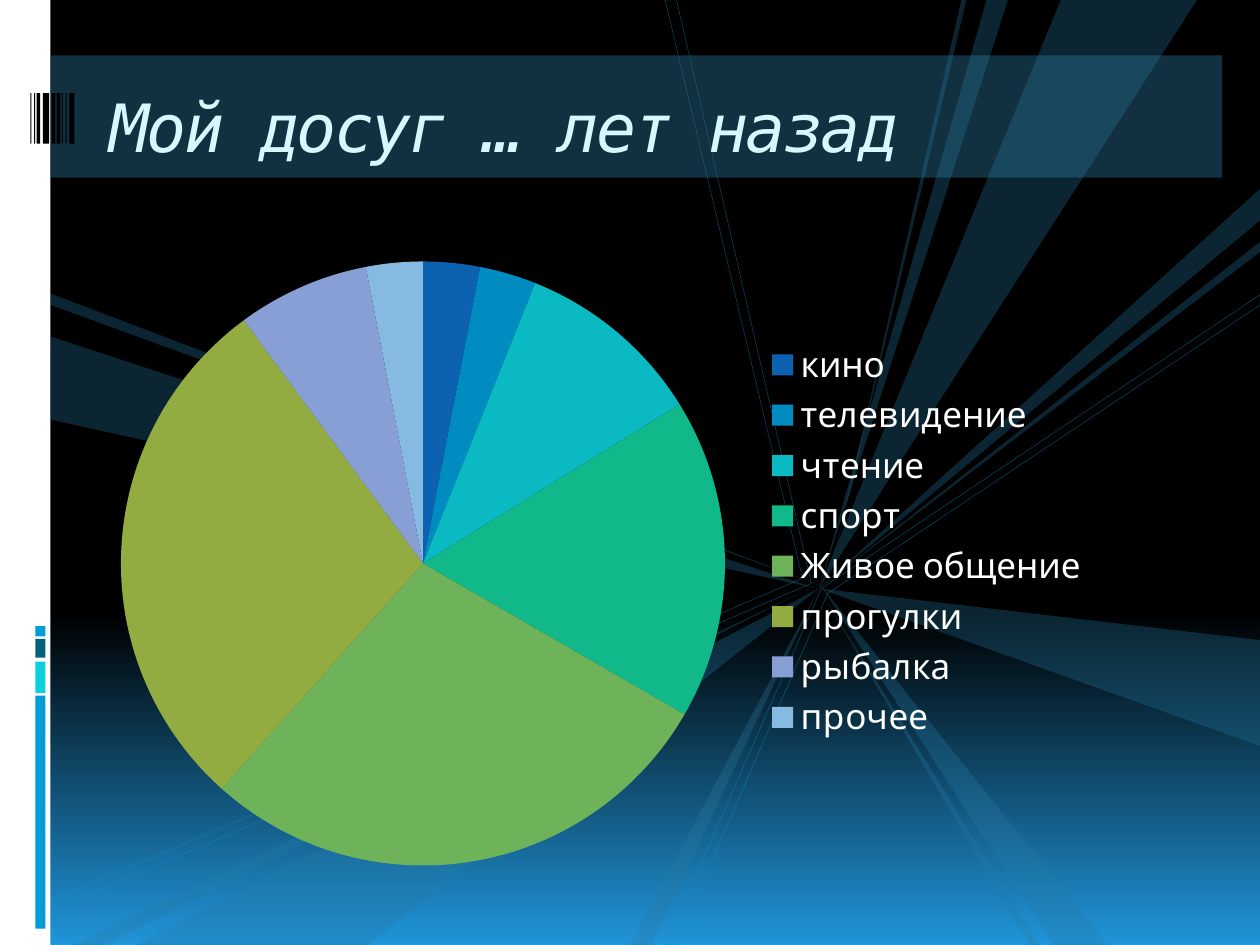
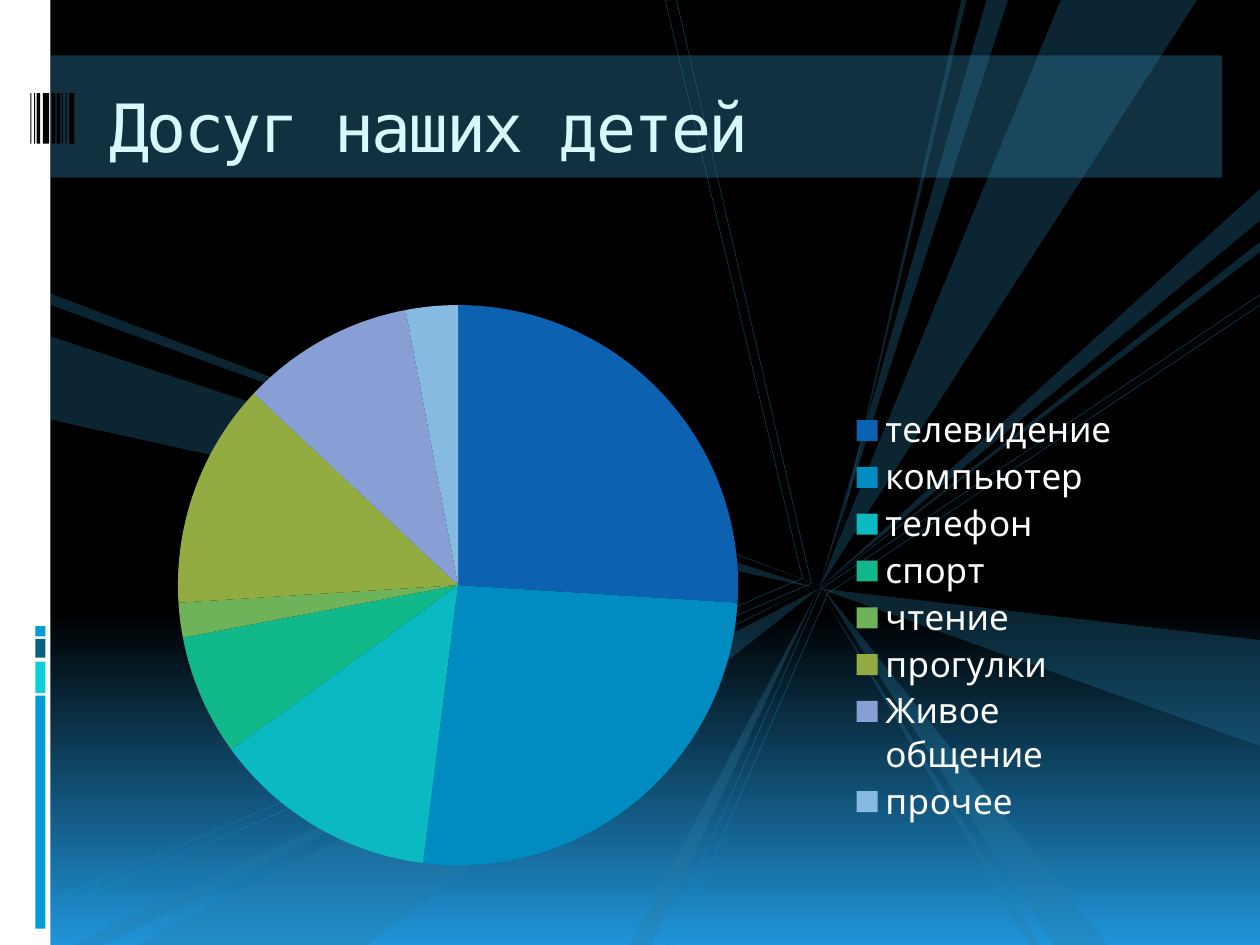
"""Build two leisure slides: a pie chart each on a shared ray-burst background."""
from copy import deepcopy

from lxml import etree
from pptx import Presentation
from pptx import util as u
from pptx.chart.data import CategoryChartData
from pptx.dml.color import RGBColor
from pptx.enum import chart as charts, shapes, text
from pptx.oxml.ns import qn

Inches = u.Inches

COLORS = {
    "night": "000000", "horizon": "2095D9", "white": "FFFFFF", "title": "D5F9FF",
    "blue": "009DD9", "aqua": "0BD0D9", "teal": "04617B", "ray": "257CA6", "band": "2C7AA0",
}
SLICE_COLORS = ["0C62B0", "008CC1", "0AB9C2", "10B88A", "6EB35A", "93AC41", "889FD6", "87BAE1"]
TITLE_FONT, CHART_FONT = "DejaVu Sans Mono", "Cabin"

SLIDES = [
    {"title": "Мой досуг … лет назад", "italic": True,
     "leisure": {"кино": 3, "телевидение": 3, "чтение": 10, "спорт": 17,
                 "Живое общение": 28, "прогулки": 28, "рыбалка": 7, "прочее": 3},
     "frame": (0.86, 1.72, 7.89, 5.15), "pie": (0.006, 0.069, 0.621, 0.931), "legend": None},
    {"title": "Досуг наших детей", "italic": False,
     "leisure": {"телевидение": 26, "компьютер": 26, "телефон": 13, "спорт": 7,
                 "чтение": 2, "прогулки": 13, "Живое общение": 10, "прочее": 3},
     "frame": (0.94, 1.95, 8.13, 5.07), "pie": (0.058, 0.093, 0.547, 0.877),
     "legend": (0.71, 0.25, 0.27, 0.66)},
]

SIDE_STRIP = (0, 0, 0.4, 7.5)
SIDE_BLOCKS = [("blue", 5.52, 1.85), ("aqua", 5.25, 0.25), ("teal", 5.07, 0.15), ("blue", 4.97, 0.08)]
BARCODE = [(0.24, 0.01), (0.27, 0.01), (0.29, 0.03), (0.34, 0.05), (0.41, 0.03),
           (0.45, 0.03), (0.49, 0.01), (0.52, 0.01), (0.55, 0.04)]
TITLE_BAND = (0.4, 0.44, 9.3, 0.97)
TITLE_BOX = (0.77, 0.56, 8.92, 0.85)

HUB = (6.5, 4.67)
OUTLINES = [
    [(5.28, 7.5), (6.52, 4.67), (10, 2.34), (10, 2.42), (6.57, 4.71), (5.36, 7.5)],
    [(0.41, 7.15), (0.41, 7.23), (6.44, 4.63), (5.37, 0), (5.28, 0), (6.37, 4.59)],
]
RAYS = [
    ("band", (7.67, 0), (6.59, 4.55), (7.63, 0)),
    ("ray", (8.42, 0), (9.5, 0), HUB),
    ("ray", HUB, (10, 5.08), (10, 5.92)),
    ("ray", (8, 0), HUB, (7.83, 0)),
    ("ray", (8.36, 7.5), (8.79, 7.5), (6.51, 4.64)),
    ("ray", (8.25, 7.5), HUB, (8.17, 7.5)),
    ("ray", (10, 1.5), (10, 1.75), HUB),
    ("ray", (10, 1.92), HUB, (10, 2)),
    ("ray", (1.08, 7.5), HUB, (2.92, 7.5)),
    ("ray", (0.58, 7.5), (6.42, 4.67), (0.83, 7.5)),
    ("ray", (0.4, 2.67), (6.48, 4.67), (0.4, 3.33)),
    ("ray", (0.4, 2.33), (6.57, 4.67), (0.4, 2.42)),
    ("band", (5, 7.5), (5.17, 7.5), HUB),
]


def rgb(name):
    return RGBColor.from_string(COLORS[name])


def style(shape, fill=None, line=None, opacity=100):
    shape.shadow.inherit = False
    if fill:
        shape.fill.solid()
        shape.fill.fore_color.rgb = rgb(fill)
    else:
        shape.fill.background()
    if line:
        shape.line.color.rgb = rgb(line)
        shape.line.width = u.Pt(0.25)
    else:
        shape.line.fill.background()
    if opacity < 100:
        for color in shape._element.iter(qn("a:srgbClr")):
            etree.SubElement(color, qn("a:alpha"), val=str(opacity * 1000))


def add_block(slide, box, fill, opacity=100):
    block = slide.shapes.add_shape(shapes.MSO_SHAPE.RECTANGLE, *map(Inches, box))
    style(block, fill, opacity=opacity)


def add_outline(slide, points, **look):
    corners = [(Inches(x), Inches(y)) for x, y in points]
    builder = slide.shapes.build_freeform(*corners[0])
    builder.add_line_segments(corners[1:], close=True)
    style(builder.convert_to_shape(), **look)


def add_text(slide, words, box, size, font, color, italic=False, spacing=0):
    frame = slide.shapes.add_textbox(*map(Inches, box)).text_frame
    frame.word_wrap = True
    frame.vertical_anchor = text.MSO_ANCHOR.MIDDLE
    frame.margin_left = frame.margin_right = Inches(0.1)
    frame.margin_top, frame.margin_bottom = Inches(0.07), Inches(0.05)
    run = frame.paragraphs[0].add_run()
    run.text = words
    run.font.size, run.font.name, run.font.italic = u.Pt(size), font, italic
    run.font.color.rgb = rgb(color)
    run._r.get_or_add_rPr().set("spc", str(round(spacing * 100)))


def paint_sky(slide):
    sky = slide.background.fill
    sky.gradient()
    sky.gradient_angle = 270
    for stop, name in zip(sky.gradient_stops, ("night", "horizon")):
        stop.color.rgb = rgb(name)
    stops = next(slide._element.iter(qn("a:gsLst")))
    stops.insert(1, deepcopy(stops[0]))
    for stop, percent in zip(stops, (0, 65, 100)):
        stop.set("pos", str(percent * 1000))


def add_backdrop(slide):
    paint_sky(slide)
    add_block(slide, SIDE_STRIP, "white")
    for fill, top, height in SIDE_BLOCKS:
        add_block(slide, (0.28, top, 0.08, height), fill)
    for points in OUTLINES:
        add_outline(slide, points, line="blue", opacity=53)
    for fill, *points in RAYS:
        add_outline(slide, points, fill=fill, opacity=30)
    add_block(slide, TITLE_BAND, "band", opacity=40)
    for left, width in BARCODE:
        add_block(slide, (left, 0.74, width, 0.4), "night")


def place(part, position, box, inner=False):
    for old in part.findall(qn("c:layout")):
        part.remove(old)
    layout = etree.Element(qn("c:layout"))
    manual = etree.SubElement(layout, qn("c:manualLayout"))
    settings = [("layoutTarget", "inner")] if inner else []
    settings += [("xMode", "edge"), ("yMode", "edge"), *zip("xywh", box)]
    for tag, value in settings:
        etree.SubElement(manual, qn(f"c:{tag}"), val=str(value))
    part.insert(position, layout)


def add_pie(slide, leisure, frame, pie, legend):
    data = CategoryChartData()
    data.categories = list(leisure)
    data.add_series("Series 1", list(leisure.values()))
    chart = slide.shapes.add_chart(charts.XL_CHART_TYPE.PIE, *map(Inches, frame), data).chart
    chart.has_title = False
    chart.font.size, chart.font.name = u.Pt(18), CHART_FONT
    chart.font.color.rgb = rgb("white")
    chart.has_legend = True
    chart.legend.position = charts.XL_LEGEND_POSITION.RIGHT
    chart.legend.include_in_layout = False
    chart.legend.font.size, chart.legend.font.name = u.Pt(20), CHART_FONT
    chart.legend.font.color.rgb = rgb("white")
    chart.plots[0].vary_by_categories = True
    for index, color in enumerate(SLICE_COLORS):
        piece = chart.plots[0].series[0].points[index].format
        piece.fill.solid()
        piece.fill.fore_color.rgb = RGBColor.from_string(color)
        piece.line.fill.background()
    place(next(chart._chartSpace.iter(qn("c:plotArea"))), 0, pie, inner=True)
    if legend:
        place(chart.legend._element, 1, legend)


def main():
    deck = Presentation()
    deck.slide_width, deck.slide_height = Inches(10), Inches(7.5)
    for content in SLIDES:
        slide = deck.slides.add_slide(deck.slide_layouts[6])
        add_backdrop(slide)
        add_text(slide, content["title"], TITLE_BOX, size=38, font=TITLE_FONT,
                 color="title", italic=content["italic"], spacing=-1.5)
        add_pie(slide, content["leisure"], content["frame"], content["pie"], content["legend"])
    deck.save("out.pptx")


if __name__ == "__main__":
    main()
